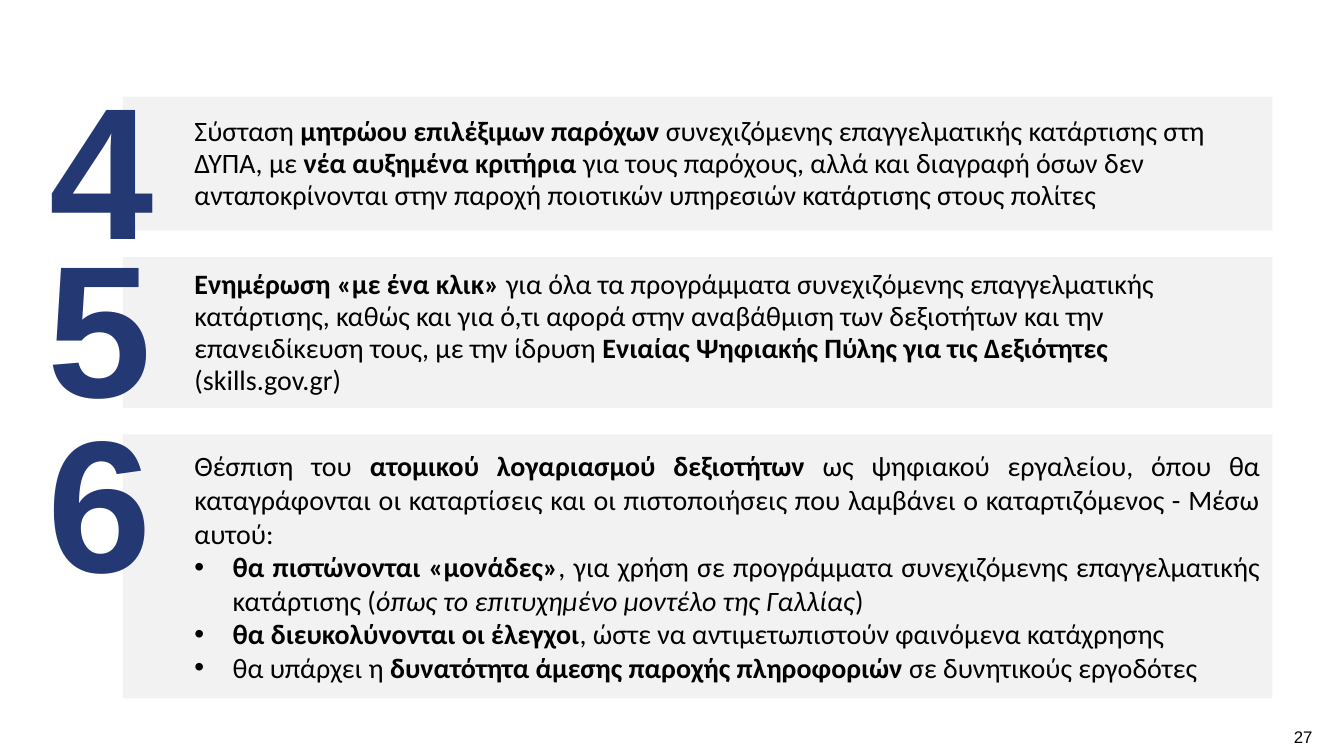
import pptx
import pptx.util
import pptx.dml.color
import pptx.enum.shapes
import pptx.enum.text
import lxml.etree

PX = 9144  # 100 px to the inch
ALIGN = pptx.enum.text.PP_ALIGN
MIDDLE = pptx.enum.text.MSO_ANCHOR.MIDDLE
THEME = {
    "panel": pptx.dml.color.RGBColor.from_string("F2F2F2"),
    "number": pptx.dml.color.RGBColor.from_string("243873"),
    "text": pptx.dml.color.RGBColor.from_string("000000"),
    "body_font": "Calibri", "number_font": "Arial",
    "body_size": 20, "number_size": 134, "page_size": 12,
}

# Measures: number, panel top and height, number left and top; runs are (text, style)
MEASURES = [
    ("4", 96, 133, 49, 85, [
        ("Σύσταση ", ""),
        ("μητρώου επιλέξιμων παρόχων ", "b"),
        ("συνεχιζόμενης επαγγελματικής κατάρτισης στη ΔΥΠΑ, με ", ""),
        ("νέα αυξημένα κριτήρια ", "b"),
        ("για τους παρόχους, αλλά και διαγραφή όσων δεν ανταποκρίνονται "
         "στην παροχή ποιοτικών υπηρεσιών κατάρτισης στους πολίτες", "")]),
    ("5", 255, 150, 47, 241, [
        ("Ενημέρωση «με ένα κλικ» ", "b"),
        ("για όλα τα προγράμματα συνεχιζόμενης επαγγελματικής κατάρτισης, "
         "καθώς και για ό,τι αφορά στην αναβάθμιση των δεξιοτήτων και την "
         "επανειδίκευση τους, με την ίδρυση ", ""),
        ("Ενιαίας Ψηφιακής Πύλης για τις Δεξιότητες ", "b"),
        ("(skills.gov.gr)", "")]),
    ("6", 431, 262, 47, 415, [
        ("Θέσπιση του ", ""),
        ("ατομικού λογαριασμού δεξιοτήτων", "b"),
        (" ως ψηφιακού εργαλείου, όπου θα καταγράφονται οι καταρτίσεις και οι "
         "πιστοποιήσεις που λαμβάνει ο καταρτιζόμενος - Μέσω αυτού:", "")]),
]
ACCOUNT_BENEFITS = [
    [("θα πιστώνονται «μονάδες»", "b"),
     (", για χρήση σε προγράμματα συνεχιζόμενης επαγγελματικής κατάρτισης (", ""),
     ("όπως το επιτυχημένο μοντέλο της Γαλλίας", "i"),
     (")", "")],
    [("θα διευκολύνονται οι έλεγχοι", "b"),
     (", ώστε να αντιμετωπιστούν φαινόμενα κατάχρησης", "")],
    [("θα υπάρχει η ", ""),
     ("δυνατότητα άμεσης παροχής πληροφοριών ", "b"),
     ("σε δυνητικούς εργοδότες", "")],
]


def write_paragraph(paragraph, runs, align, line_spacing, after, bullet=None):
    properties = paragraph._p.get_or_add_pPr()
    indent = 38 * PX if bullet else 0
    properties.set("marL", str(indent))
    properties.set("indent", str(-indent))
    mark = pptx.oxml.ns.qn("a:buChar" if bullet else "a:buNone")
    mark_element = lxml.etree.SubElement(properties, mark)
    if bullet:
        mark_element.set("char", bullet)
    paragraph.alignment = align
    paragraph.line_spacing = line_spacing
    paragraph.space_before = pptx.util.Pt(0)
    paragraph.space_after = pptx.util.Pt(after)
    for text, style in runs:
        run = paragraph.add_run()
        run.text = text
        run.font.name = THEME["body_font"]
        run.font.size = pptx.util.Pt(THEME["body_size"])
        run.font.color.rgb = THEME["text"]
        run.font.bold = style == "b"
        run.font.italic = style == "i"


def add_label(text, box, font_size, color, bold, inset):
    label = slide.shapes.add_textbox(*[value * PX for value in box])
    frame = label.text_frame
    frame.word_wrap = False
    frame.margin_left = frame.margin_right = inset * PX
    frame.margin_top = frame.margin_bottom = inset * PX
    paragraph = frame.paragraphs[0]
    paragraph.alignment = ALIGN.CENTER
    run = paragraph.add_run()
    run.text = text
    run.font.name = THEME["number_font"]
    run.font.size = pptx.util.Pt(font_size)
    run.font.color.rgb = color
    run.font.bold = bold
    return frame


presentation = pptx.Presentation()
presentation.slide_width = 1334 * PX
presentation.slide_height = 750 * PX
slide = presentation.slides.add_slide(presentation.slide_layouts[1])
unused_title = slide.shapes.title._element
unused_title.getparent().remove(unused_title)
account_list = slide.placeholders[1]

# Panels with their large numbers
for number, top, height, number_left, number_top, runs in MEASURES:
    has_list = number == "6"
    if has_list:
        panel = account_list
        panel.left, panel.top, panel.width, panel.height = (
            122 * PX, top * PX, 1141 * PX, height * PX)
    else:
        panel = slide.shapes.add_shape(
            pptx.enum.shapes.MSO_SHAPE.RECTANGLE,
            122 * PX, top * PX, 1141 * PX, height * PX)
        panel.shadow.inherit = False
        panel.line.fill.background()
    panel.fill.solid()
    panel.fill.fore_color.rgb = THEME["panel"]

    frame = panel.text_frame
    frame.word_wrap = True
    frame.auto_size = pptx.enum.text.MSO_AUTO_SIZE.NONE
    frame.vertical_anchor = MIDDLE
    frame.margin_left, frame.margin_right = 71 * PX, 12 * PX
    frame.margin_top = frame.margin_bottom = 8 * PX
    if has_list:
        write_paragraph(frame.paragraphs[0], runs, ALIGN.JUSTIFY, 1.0, 0)
        for benefit in ACCOUNT_BENEFITS:
            write_paragraph(frame.add_paragraph(), benefit, ALIGN.JUSTIFY, 1.0, 0, "•")
    else:
        write_paragraph(frame.paragraphs[0], runs, ALIGN.LEFT, 0.95, 8)

    number_frame = add_label(number, (number_left, number_top, 104, 192),
                             THEME["number_size"], THEME["number"], True, 0)
    number_frame.vertical_anchor = MIDDLE
    number_frame.paragraphs[0].line_spacing = 0.85
    number_frame.paragraphs[0].space_after = pptx.util.Pt(6)

# Page number
add_label("27", (1277, 715, 33, 31), THEME["page_size"], THEME["text"], False, 6)

presentation.save("out.pptx")
